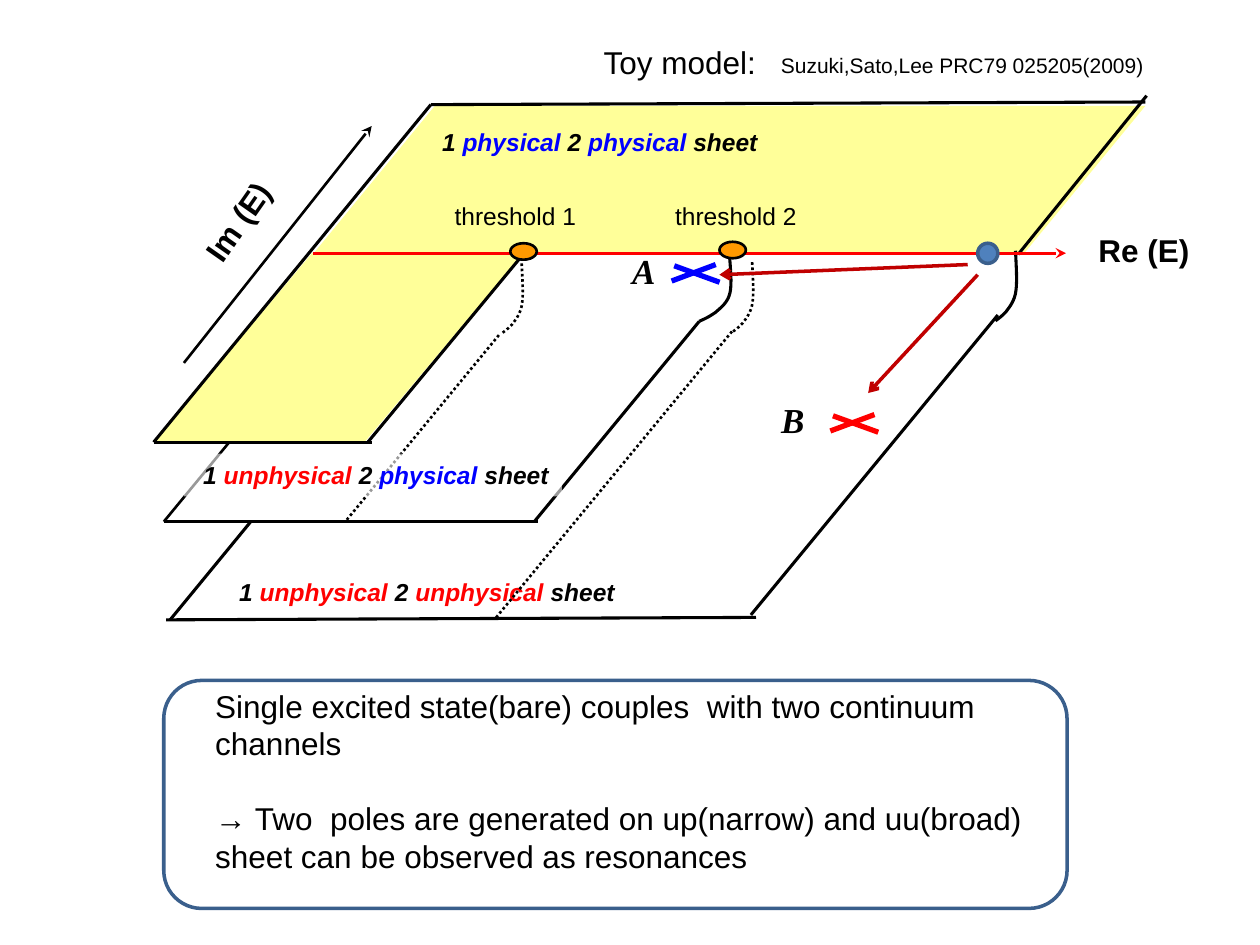
from lxml import etree
from pptx import Presentation
from pptx.dml.color import RGBColor
from pptx.enum import dml, shapes, text
from pptx.oxml.ns import qn
from pptx.util import Pt

BLACK, RED, BLUE, CRIMSON = "000000", "FF0000", "0000FF", "C00000"
YELLOW, ORANGE, DOT, EDGE, WHITE = "FFFF99", "FF9900", "4F81BD", "3A5F8C", "FFFFFF"

SHEETS = [
    (178.6, 60.5, 475.9, 85, 0.822),
    (87.8, 144.7, 211, 108, 0.838),
]
BACK_EDGE = (164.2, 212.4, 93.6, 298.1, 1.5)
EDGES = [
    (246.2, 59.8, 654.5, 58.3, 1.75),
    (87.8, 252.7, 212.4, 252.7, 1.75),
    (655.2, 54.7, 581.8, 145.4, 1.75),
    (143.3, 298.1, 97.2, 354.2, 1.75),
    (299.5, 144.7, 210.2, 252.7, 1.75),
    (93.6, 298.1, 307.4, 298.1, 1.5),
    (95, 354.2, 432, 352.8, 1.75),
    (399.6, 183.6, 305.3, 298.1, 1.75),
    (570.2, 180, 429.1, 351.4, 1.75),
    (246.2, 59.8, 87.8, 252.7, 1.75),
]
DOTTED_EDGES = [(285.1, 191.5, 197.3, 298.1), (418.3, 189.4, 283, 353.5)]
ARROWS = [
    (178.6, 144.7, 609.1, 144.7, RED, 1.5, "stealth"),
    (105.1, 207.4, 212.4, 72, BLACK, 1.5, "stealth"),
    (553, 151.2, 411.1, 157, CRIMSON, 2, "arrow"),
    (558.7, 157, 496.1, 224.6, CRIMSON, 2, "arrow"),
]
HOOK = [
    ((0.92, 0), (0.95, 0.21), (1, 0.43), (0.94, 0.57)),
    ((0.94, 0.57), (0.88, 0.72), (0.65, 0.8), (0.49, 0.87)),
    ((0.49, 0.87), (0.31, 0.93), (0.15, 0.97), (0, 1)),
]
HOOKS = [
    (568.8, 143.3, 12.5, 40, 1.75, False),
    (286.6, 150.5, 12.5, 40, 1.5, True),
    (418.3, 149.8, 12.5, 40, 1.5, True),
    (399.6, 145.4, 18.7, 38.2, 1.75, False),
]
CROSS = [(1.5, 0.7, 27.4, 10.1), (0, 9.4, 25.2, 0)]
CROSSES = [(383.8, 151.2, BLUE), (474.5, 236.9, RED)]
POINTS = [
    (291.6, 139, 15.1, 9.4, ORANGE, BLACK, 1.5),
    (411.1, 138.2, 15.1, 9.4, ORANGE, BLACK, 1.5),
    (558.7, 139, 11.5, 11.5, DOT, EDGE, 2),
]
SHEET_LABELS = [
    (129.6, 326.2, 236.9, True,
     [("1 ", BLACK), ("unphysical", RED), (" 2 ", BLACK), ("unphysical ", RED), ("sheet", BLACK)]),
    (245.5, 69.1, 195.1, False,
     [("1 ", BLACK), ("physical", BLUE), (" 2 ", BLACK), ("physical ", BLUE), ("sheet", BLACK)]),
    (105.1, 259.2, 216, True,
     [(" 1 ", BLACK), ("unphysical ", RED), ("2 ", BLACK), ("physical ", BLUE), ("sheet", BLACK)]),
]
LABELS = [
    ("Im (E)", 103.7, 111.6, 64.8, 29.5, 18, "Arial", True, False, 305),
    ("Re (E)", 620.6, 128.2, 67, 29.5, 18, "Arial", True, False, 0),
    ("B", 439.2, 223.9, 28.1, 31.7, 20, "Times New Roman", True, True, 0),
    ("A", 354.2, 139, 28.1, 31.7, 20, "Times New Roman", True, True, 0),
    ("threshold 1", 252.7, 111.6, 97.9, 24.5, 14, "Arial", False, False, 0),
    ("threshold 2", 378.7, 111.6, 84.2, 24.5, 14, "Arial", False, False, 0),
]
TITLE = "Toy model:"
CITATION = "Suzuki,Sato,Lee PRC79 025205(2009)"
SUMMARY = [
    "Single excited state(bare) couples  with two continuum channels",
    "→ Two  poles are generated on up(narrow) and uu(broad) sheet can be observed as resonances",
]

prs = Presentation()
prs.slide_width, prs.slide_height = Pt(720), Pt(540)
s = prs.slides.add_slide(prs.slide_layouts[5])


def rgb(value):
    return RGBColor.from_string(value)


def stroke(line, color, width, dotted=False):
    line.color.rgb = rgb(color)
    line.width = Pt(width)
    if dotted:
        line.dash_style = dml.MSO_LINE.ROUND_DOT


def add_line(x1, y1, x2, y2, color, width, head=None, dotted=False):
    c = s.shapes.add_connector(shapes.MSO_CONNECTOR.STRAIGHT, Pt(x1), Pt(y1), Pt(x2), Pt(y2))
    stroke(c.line, color, width, dotted)
    spPr = c.element.spPr
    if head:
        etree.SubElement(spPr.find(qn("a:ln")), qn("a:tailEnd"), type=head)
    etree.SubElement(spPr, qn("a:effectLst"))


def finish(sp, fill=None, line=None, width=1, dotted=False):
    sp.shadow.inherit = False
    if fill:
        sp.fill.solid()
        sp.fill.fore_color.rgb = rgb(fill)
    else:
        sp.fill.background()
    if line:
        stroke(sp.line, line, width, dotted)
    else:
        sp.line.fill.background()


def add_preset(kind, x, y, w, h, *style):
    sp = s.shapes.add_shape(kind, Pt(x), Pt(y), Pt(w), Pt(h))
    finish(sp, *style)
    return sp


def add_run(p, words, size, color=BLACK, font="Arial", bold=False, italic=False):
    r = p.add_run()
    r.text = words
    r.font.size, r.font.name = Pt(size), font
    r.font.bold, r.font.italic = bold, italic
    r.font.color.rgb = rgb(color)


def add_box(x, y, w, h, wrap=False):
    sp = s.shapes.add_textbox(Pt(x), Pt(y), Pt(w), Pt(h))
    sp.text_frame.word_wrap = wrap
    return sp


def add_sheet_label(x, y, w, veiled, runs):
    sp = add_box(x, y, w, 24.5)
    if veiled:
        sp.fill.solid()
        sp.fill.fore_color.rgb = rgb(WHITE)
        clr = sp.element.spPr.find(".//" + qn("a:srgbClr"))
        etree.SubElement(clr, qn("a:alpha"), val="60000")
    for words, color in runs:
        add_run(sp.text_frame.paragraphs[0], words, 14, color, bold=True, italic=True)


def add_hook(x, y, w, h, width, dotted):
    steps = 8
    pts = []
    for a, b, c, d in HOOK:
        for i in range(steps + 1):
            t = i / steps
            weights = ((1 - t) ** 3, 3 * t * (1 - t) ** 2, 3 * t * t * (1 - t), t ** 3)
            fx, fy = (sum(k * q[n] for k, q in zip(weights, (a, b, c, d))) for n in (0, 1))
            pts.append((Pt(x + w * fx), Pt(y + h * fy)))
    fb = s.shapes.build_freeform(*pts[0])
    fb.add_line_segments(pts[1:], close=False)
    finish(fb.convert_to_shape(), None, BLACK, width, dotted)


title = s.shapes.title
title.left, title.top, title.width, title.height = Pt(337.7), Pt(20.9), Pt(105), Pt(28.8)
tf = title.text_frame
tf.auto_size = text.MSO_AUTO_SIZE.NONE
tf.vertical_anchor = text.MSO_ANCHOR.TOP
tf.paragraphs[0].alignment = text.PP_ALIGN.LEFT
add_run(tf.paragraphs[0], TITLE, 18)
add_run(add_box(439.2, 26.3, 230, 22).text_frame.paragraphs[0], CITATION, 12)

add_sheet_label(*SHEET_LABELS[0])
add_line(*BACK_EDGE[:4], BLACK, BACK_EDGE[4])
for *box, slant in SHEETS:
    add_preset(shapes.MSO_SHAPE.PARALLELOGRAM, *box, YELLOW).adjustments[0] = slant
add_sheet_label(*SHEET_LABELS[1])
for *ends, width in EDGES:
    add_line(*ends, BLACK, width)
for ends in DOTTED_EDGES:
    add_line(*ends, BLACK, 1.5, dotted=True)
for hook in HOOKS:
    add_hook(*hook)
add_sheet_label(*SHEET_LABELS[2])
for arrow in ARROWS:
    add_line(*arrow)
for point in POINTS:
    add_preset(shapes.MSO_SHAPE.OVAL, *point)
for x, y, color in CROSSES:
    for x1, y1, x2, y2 in CROSS:
        add_line(x + x1, y + y1, x + x2, y + y2, color, 3)

for words, x, y, w, h, size, font, bold, italic, angle in LABELS:
    sp = add_box(x, y, w, h)
    sp.rotation = angle
    add_run(sp.text_frame.paragraphs[0], words, size, BLACK, font, bold, italic)

add_preset(shapes.MSO_SHAPE.ROUNDED_RECTANGLE, 93.6, 388.8, 516.2, 130.3, None, EDGE, 2)
tf = add_box(115.9, 388.8, 481.7, 116.6, True).text_frame
for i, words in enumerate(SUMMARY):
    p = tf.add_paragraph() if i else tf.paragraphs[0]
    p.space_before = Pt(21 * i)
    add_run(p, words, 18)

prs.save("out.pptx")
